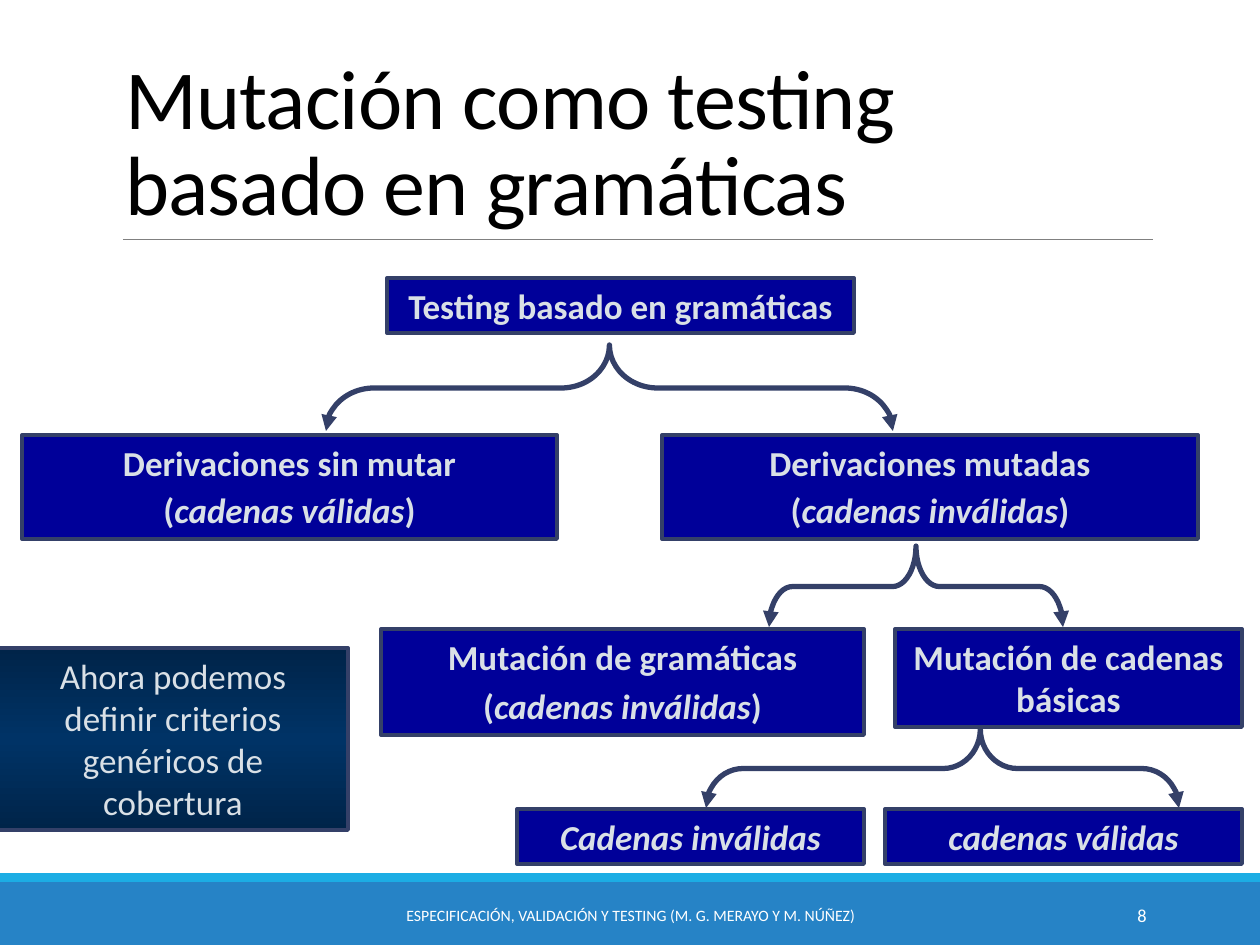
import copy

import pptx
import pptx.dml.color
import pptx.enum.shapes
import pptx.enum.text
import pptx.oxml.ns
import pptx.oxml.xmlchemy
import pptx.util

RGB = pptx.dml.color.RGBColor
SHAPE = pptx.enum.shapes.MSO_SHAPE
ALIGN = pptx.enum.text.PP_ALIGN
ANCHOR = pptx.enum.text.MSO_ANCHOR
FIT = pptx.enum.text.MSO_AUTO_SIZE
Pt = pptx.util.Pt
qn = pptx.oxml.ns.qn

WHITE = RGB(0xFF, 0xFF, 0xFF)
BLACK = RGB(0, 0, 0)
GRAY = RGB(0x80, 0x80, 0x80)
BLUE = RGB(0x26, 0x83, 0xC6)
CYAN = RGB(0x1C, 0xAD, 0xE4)
NAVY = RGB(0, 0, 0x99)
EDGE = RGB(0x34, 0x40, 0x68)
PALE = RGB(0xD9, 0xE0, 0xE6)
DARK = RGB(0, 0x24, 0x49)
MID = RGB(0, 0x33, 0x66)

SCALE = 914400 / 126


def px(*nums):
    return [round(n * SCALE) for n in nums]


def write(frame, lines, size=20, color=PALE, bold=False, align=ALIGN.CENTER,
          anchor=ANCHOR.TOP, gap=0, lead=None, track=None, font="Calibri"):
    """Fill a frame with lines of text; parts between asterisks are italic."""
    frame.word_wrap = True
    frame.vertical_anchor = anchor
    for i, line in enumerate(lines):
        para = frame.add_paragraph() if i else frame.paragraphs[0]
        para.alignment = align
        para.space_before = Pt(gap if i else 0)
        if lead:
            para.line_spacing = lead
        for j, part in enumerate(line.split("*")):
            if not part:
                continue
            run = para.add_run()
            run.text = part
            run.font.name = font
            run.font.size = Pt(size)
            run.font.bold = bold
            run.font.italic = j % 2 == 1
            run.font.color.rgb = color
            if track is not None:
                run._r.get_or_add_rPr().set("spc", str(round(track * 100)))


class Deck:
    def __init__(self):
        self.prs = pptx.Presentation()
        self.prs.slide_width, self.prs.slide_height = px(1260, 945)
        self.slide = self.prs.slides.add_slide(self.prs.slide_layouts[6])
        self.shapes = self.slide.shapes

    def shape(self, kind, x, y, w, h):
        item = self.shapes.add_shape(kind, *px(x, y, w, h))
        item.shadow.inherit = False
        return item

    def band(self, y, h, color):
        item = self.shape(SHAPE.RECTANGLE, 0, y, 1260, h)
        item.fill.solid()
        item.fill.fore_color.rgb = color
        item.line.fill.background()

    def rule(self, x1, x2, y):
        item = self.shapes.add_connector(
            pptx.enum.shapes.MSO_CONNECTOR.STRAIGHT, *px(x1, y, x2, y))
        item.line.color.rgb = GRAY
        item.line.width = Pt(0.5)
        spPr = item._element.spPr
        spPr.append(spPr.makeelement(qn("a:effectLst"), {}))

    def label(self, x, y, w, h, line, **style):
        item = self.shapes.add_textbox(*px(x, y, w, h))
        write(item.text_frame, [line], **style)

    def box(self, x, y, w, h, *lines, bold=True, gap=0):
        item = self.shape(SHAPE.RECTANGLE, x, y, w, h)
        item.fill.solid()
        item.fill.fore_color.rgb = NAVY
        item.line.color.rgb = EDGE
        item.line.width = Pt(2.25)
        write(item.text_frame, lines, bold=bold, gap=gap)
        item.text_frame.auto_size = FIT.SHAPE_TO_FIT_TEXT
        return item

    def note(self, x, y, w, h, line):
        """Add a box with a dark-mid-dark vertical gradient."""
        fill = self.box(x, y, w, h, line, bold=False).fill
        fill.gradient()
        fill.gradient_angle = 270
        last = fill.gradient_stops[1]._gs
        last.addnext(copy.deepcopy(last))
        for stop, place, color in zip(fill.gradient_stops, (0, 0.5, 1),
                                      (DARK, MID, DARK)):
            stop.position = place
            stop.color.rgb = color

    def fork(self, x, y, w, h, curve, tip):
        """Add a brace that points up, given by the bounds it shows."""
        item = self.shape(SHAPE.RIGHT_BRACE, x + (w - h) / 2,
                          y + (h - w) / 2, h, w)
        item.rotation = 270
        item.adjustments[0] = curve
        item.adjustments[1] = tip
        item.fill.background()
        item.line.color.rgb = EDGE
        item.line.width = Pt(3)
        ln = item._element.spPr.find(qn("a:ln"))
        for end in ("a:headEnd", "a:tailEnd"):
            ln.append(ln.makeelement(qn(end), {"type": "triangle"}))


def main():
    deck = Deck()
    deck.band(882, 63, BLUE)
    deck.band(873, 9, CYAN)
    deck.rule(123, 1153, 239)
    deck.label(113, 39, 1045, 200, "Mutación como testing basado en gramáticas",
               size=48, color=BLACK, align=ALIGN.LEFT, anchor=ANCHOR.BOTTOM,
               lead=0.85, track=-0.5)
    foot = dict(color=WHITE, anchor=ANCHOR.MIDDLE)
    deck.label(381, 890, 499, 50,
               "ESPECIFICACIÓN, VALIDACIÓN Y TESTING (M. G. MERAYO Y M. NÚÑEZ)",
               size=9, **foot)
    deck.label(1023, 890, 136, 50, "8", size=10.5, align=ALIGN.RIGHT, **foot)

    deck.box(387, 278, 467, 55, "Testing basado en gramáticas")
    deck.fork(326, 345, 567, 86, 0.56, 0.5)
    deck.box(22, 435, 535, 104, "Derivaciones sin mutar",
             "(*cadenas válidas*)", gap=3)
    deck.box(662, 435, 536, 104, "Derivaciones mutadas",
             "(*cadenas inválidas*)", gap=3)
    deck.fork(769, 546, 294, 81, 0.29, 0.5)
    deck.box(381, 629, 483, 106, "Mutación de gramáticas",
             "(*cadenas inválidas*)", gap=4)
    deck.box(895, 629, 347, 98, "Mutación de cadenas básicas")
    deck.fork(706, 729, 473, 79, 0.47, 0.58)
    deck.box(517, 809, 347, 55, "*Cadenas inválidas*")
    deck.box(885, 809, 357, 55, "*cadenas válidas*")
    deck.note(-2, 648, 350, 182,
              "Ahora podemos definir criterios genéricos de cobertura")
    deck.prs.save("out.pptx")


if __name__ == "__main__":
    main()
